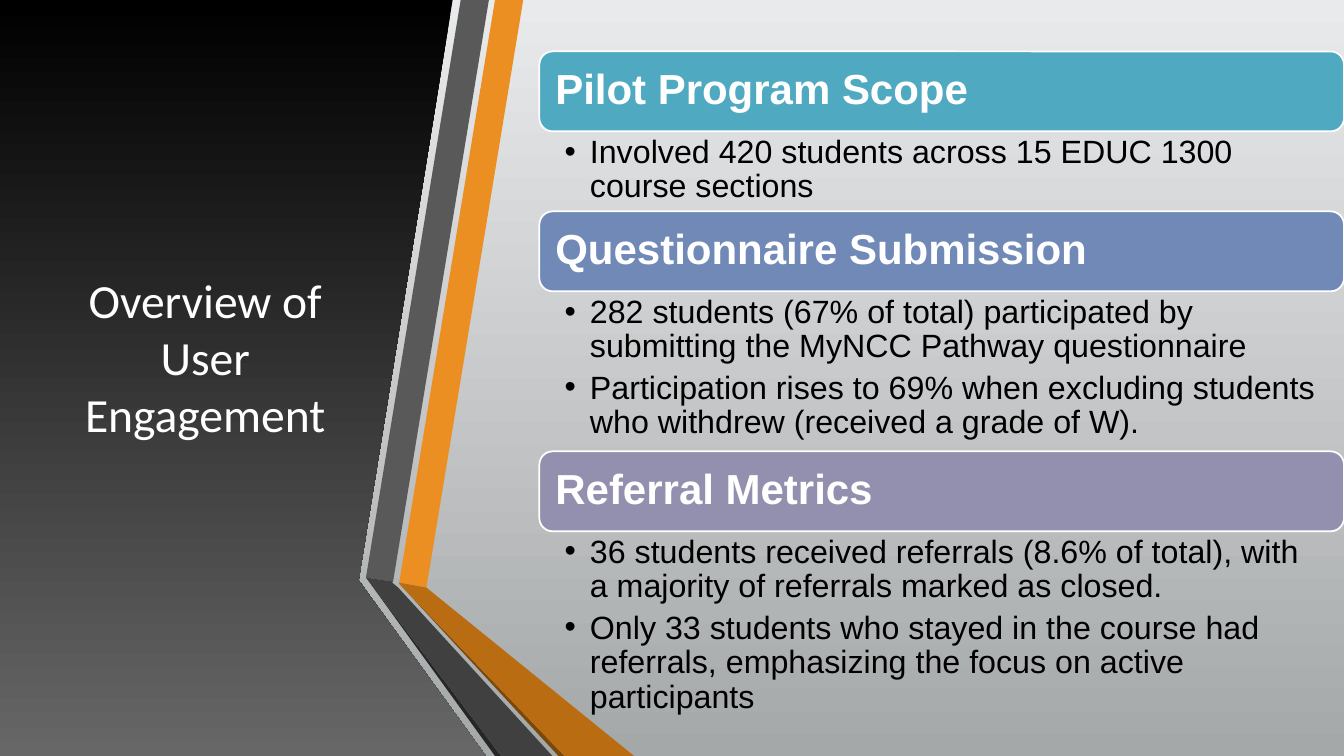
from lxml import etree
from pptx import Presentation
from pptx.dml.color import RGBColor
from pptx.enum.shapes import MSO_SHAPE
from pptx.enum.text import MSO_ANCHOR, MSO_AUTO_SIZE, PP_ALIGN
from pptx.oxml.ns import qn
from pptx.util import Inches, Pt

ROUNDED = MSO_SHAPE.ROUNDED_RECTANGLE
TOP, MIDDLE = MSO_ANCHOR.TOP, MSO_ANCHOR.MIDDLE
LEFT, CENTER = PP_ALIGN.LEFT, PP_ALIGN.CENTER
NO_AUTOFIT = MSO_AUTO_SIZE.NONE

WHITE = RGBColor(0xFF, 0xFF, 0xFF)
BLACK = RGBColor(0x00, 0x00, 0x00)
SILVER = RGBColor(0xE9, 0xEA, 0xEB)
STEEL = RGBColor(0xA5, 0xA8, 0xA9)
GRAPHITE = RGBColor(0x67, 0x67, 0x67)
ORANGE = RGBColor(0xEB, 0x8F, 0x22)
ORANGE_FOLD = RGBColor(0xB9, 0x6C, 0x11)
ORANGE_SHADE = RGBColor(0x7B, 0x48, 0x0B)
GRAY = RGBColor(0x59, 0x59, 0x59)
GRAY_FOLD = RGBColor(0x40, 0x40, 0x40)
GRAY_SHADE = RGBColor(0x26, 0x26, 0x26)
TEAL = RGBColor(0x4F, 0xA9, 0xC1)
BLUE = RGBColor(0x71, 0x89, 0xB6)
MAUVE = RGBColor(0x93, 0x90, 0xAF)

# All positions are percentages of the slide's width and height
PANEL = [(0, 0), (33.68, 0), (26.7, 76.67), (26.7, 76.8), (36.15, 100), (0, 100)]
RIBBONS = [
    (ORANGE, [(29.7, 77.07), (31.73, 77.73), (38.93, 0), (36.83, 0)]),
    (GRAY, [(36.38, 0), (34.28, 0), (27.23, 76.4), (29.25, 76.93)]),
    (GRAY_SHADE, [(27.23, 76.4), (36.83, 100), (37.28, 100)]),
    (ORANGE_SHADE, [(29.7, 77.2), (41.55, 100), (42, 100)]),
    (ORANGE_FOLD, [(29.7, 77.2), (42, 100), (47.18, 100), (31.73, 77.73), (29.7, 77.07)]),
    (GRAY_FOLD, [(41.1, 100), (29.63, 77.73), (29.18, 77.07), (29.25, 76.93),
                 (27.23, 76.4), (37.28, 100)]),
]
SECTIONS_LEFT, SECTIONS_TOP, SECTIONS_WIDTH = 40.13, 6.8, 59.87
ROW = 10.58  # a heading takes one row, and so does each bullet

# Heading, colour, index of the list's placeholder, bullets
SECTIONS = [
    ("Pilot Program Scope", TEAL, 1,
     ["Involved 420 students across 15 EDUC 1300 course sections"]),
    ("Questionnaire Submission", BLUE, 2,
     ["282 students (67% of total) participated by submitting the MyNCC Pathway questionnaire",
      "Participation rises to 69% when excluding students who withdrew (received a grade of W)."]),
    ("Referral Metrics", MAUVE, 4,
     ["36 students received referrals (8.6% of total), with a majority of referrals "
      "marked as closed.",
      "Only 33 students who stayed in the course had referrals, emphasizing the focus "
      "on active participants"]),
]


class SlideBuilder:
    title_font, body_font = "Calibri", "Arial"
    title_size, heading_size, bullet_size = Pt(34), Pt(30), Pt(23)

    def __init__(self, deck):
        self.width, self.height = deck.slide_width, deck.slide_height
        self.slide = deck.slides.add_slide(deck.slide_layouts[4])
        self.shapes = self.slide.shapes

    def x(self, share):
        return round(self.width * share / 100)

    def y(self, share):
        return round(self.height * share / 100)

    def gradient(self, fill, upper, lower):
        fill.gradient()
        fill.gradient_angle = 270
        for stop, color in zip(fill.gradient_stops, (upper, lower)):
            stop.color.rgb = color

    def outline(self, points):
        corners = [(self.x(px), self.y(py)) for px, py in points]
        builder = self.shapes.build_freeform(*corners[0])
        builder.add_line_segments(corners[1:], close=True)
        facet = builder.convert_to_shape()
        facet.shadow.inherit = False
        facet.line.fill.background()
        return facet

    def frame(self, shape, anchor, insets):
        text = shape.text_frame
        text.word_wrap = True
        text.auto_size = NO_AUTOFIT
        text.vertical_anchor = anchor
        text.margin_left, text.margin_top, text.margin_right, text.margin_bottom = insets
        return text

    def style(self, paragraph, font, size, color, bold=False, align=LEFT):
        paragraph.alignment = align
        paragraph.font.name, paragraph.font.size = font, size
        paragraph.font.color.rgb, paragraph.font.bold = color, bold

    def place(self, placeholder, left, top, width, height):
        placeholder.left, placeholder.top = self.x(left), self.y(top)
        placeholder.width, placeholder.height = self.x(width), self.y(height)
        self.shapes._spTree.append(placeholder._element)  # in front of the panel

    def title(self, words, left, top, width, height):
        title = self.shapes.title
        self.place(title, left, top, width, height)
        insets = (self.x(0.75), self.y(0.67)) * 2
        text = self.frame(title, MIDDLE, insets)
        text.text = words
        self.style(text.paragraphs[0], self.title_font, self.title_size, WHITE, align=CENTER)

    def heading(self, words, color, top):
        bar = self.shapes.add_shape(ROUNDED, self.x(SECTIONS_LEFT), self.y(top),
                                    self.x(SECTIONS_WIDTH), self.y(ROW))
        bar.shadow.inherit = False
        bar.fill.solid()
        bar.fill.fore_color.rgb = color
        bar.line.color.rgb, bar.line.width = WHITE, Pt(1.25)
        text = self.frame(bar, MIDDLE, (self.x(0.9), self.y(1.6)) * 2)
        text.text = words
        text.paragraphs[0].line_spacing = 0.9
        self.style(text.paragraphs[0], self.body_font, self.heading_size, WHITE, bold=True)

    def bullets(self, index, items, top):
        placeholder = self.slide.placeholders[index]
        self.place(placeholder, SECTIONS_LEFT, top, SECTIONS_WIDTH, ROW * len(items))
        insets = self.x(1.88), self.y(0.53), self.x(1.73), self.y(0.53)
        text = self.frame(placeholder, TOP, insets)
        text.text = "\n".join(items)
        indent = self.x(1.88)
        for paragraph in text.paragraphs:
            paragraph.line_spacing = 0.9
            paragraph.space_before, paragraph.space_after = Pt(0), Pt(4.6)
            properties = paragraph._p.get_or_add_pPr()
            properties.set("marL", str(indent))
            properties.set("indent", str(-indent))
            etree.SubElement(properties, qn("a:buFont"), typeface=self.body_font)
            etree.SubElement(properties, qn("a:buChar"), char="•")
            self.style(paragraph, self.body_font, self.bullet_size, BLACK)

    def drop_empty_placeholders(self):
        for placeholder in list(self.slide.placeholders):
            if not placeholder.text_frame.text:
                self.shapes._spTree.remove(placeholder._element)


def main():
    deck = Presentation()
    deck.slide_width, deck.slide_height = Inches(13.33), Inches(7.5)
    page = SlideBuilder(deck)

    # Background, dark panel and folded ribbons
    page.gradient(page.slide.background.fill, SILVER, STEEL)
    page.gradient(page.outline(PANEL).fill, BLACK, GRAPHITE)
    for color, points in RIBBONS:
        facet = page.outline(points)
        facet.fill.solid()
        facet.fill.fore_color.rgb = color

    # Title on the panel
    page.title("Overview of User Engagement", 4.43, 10, 21.68, 74.4)

    # Stacked sections
    top = SECTIONS_TOP
    for words, color, index, items in SECTIONS:
        page.heading(words, color, top)
        page.bullets(index, items, top + ROW)
        top += ROW * (1 + len(items))

    page.drop_empty_placeholders()
    deck.save("out.pptx")


if __name__ == "__main__":
    main()
